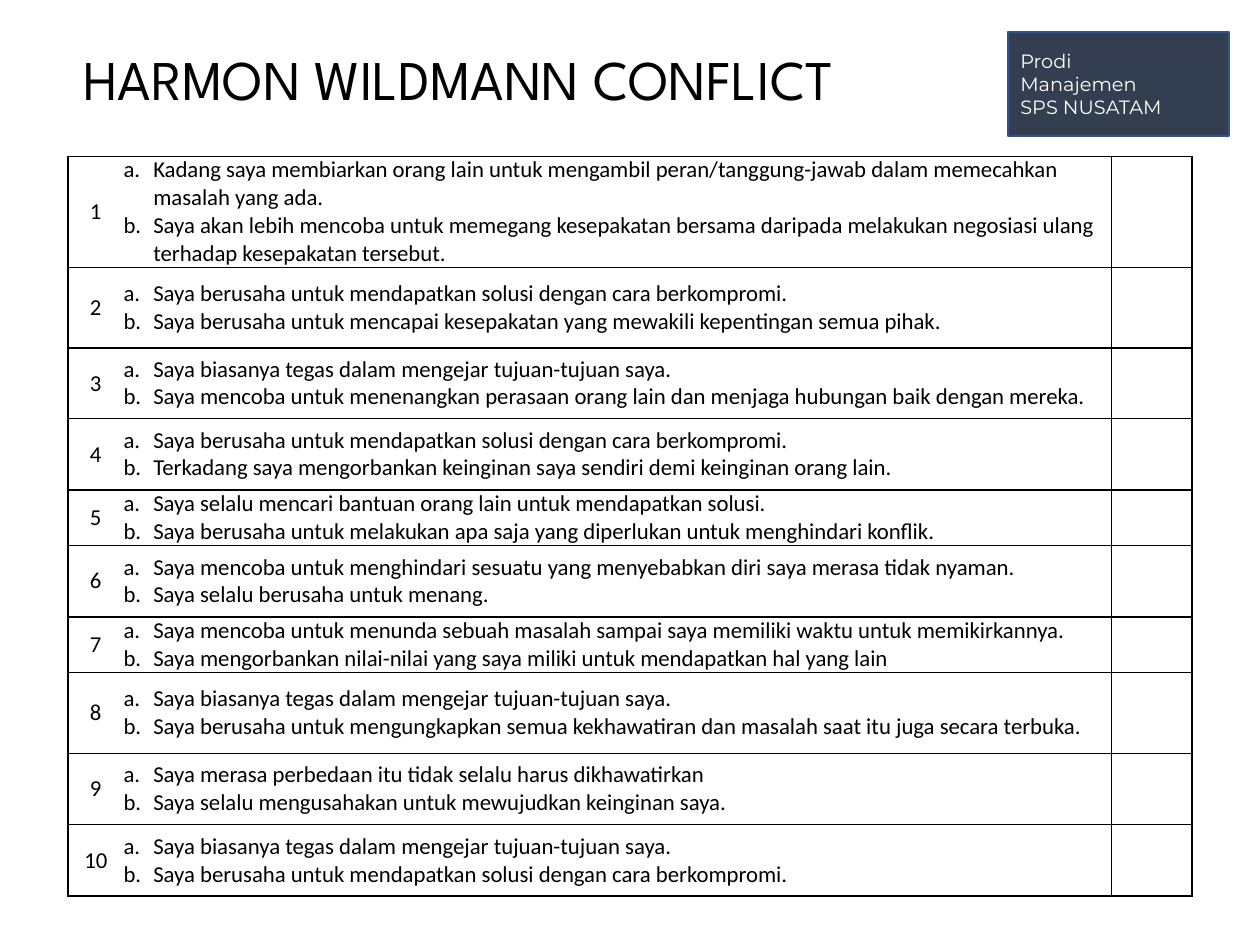
import pptx
import pptx.dml.color
import pptx.enum.shapes
import pptx.enum.text
import pptx.oxml.ns
import pptx.util
from lxml import etree

Cm = pptx.util.Cm
Pt = pptx.util.Pt
RGBColor = pptx.dml.color.RGBColor
MIDDLE = pptx.enum.text.MSO_ANCHOR.MIDDLE
ALIGN = pptx.enum.text.PP_ALIGN

BLACK = RGBColor(0x00, 0x00, 0x00)
WHITE = RGBColor(0xFF, 0xFF, 0xFF)
SLATE = RGBColor(0x33, 0x3F, 0x50)
BLUE = RGBColor(0x32, 0x54, 0x91)

THIN, THICK = Pt(0.5), Pt(1)
INDENT = Cm(0.6)
COLUMN_WIDTHS = [Cm(1.12), Cm(19.91), Cm(1.63)]

# Row height in centimetres, then statements a and b
QUESTIONS = [
    (1.63, "Kadang saya membiarkan orang lain untuk mengambil peran/tanggung-jawab dalam memecahkan masalah yang ada.",
     "Saya akan lebih mencoba untuk memegang kesepakatan bersama daripada melakukan negosiasi ulang terhadap kesepakatan tersebut."),
    (1.63, "Saya berusaha untuk mendapatkan solusi dengan cara berkompromi.",
     "Saya berusaha untuk mencapai kesepakatan yang mewakili kepentingan semua pihak."),
    (1.42, "Saya biasanya tegas dalam mengejar tujuan-tujuan saya.",
     "Saya mencoba untuk menenangkan perasaan orang lain dan menjaga hubungan baik dengan mereka."),
    (1.44, "Saya berusaha untuk mendapatkan solusi dengan cara berkompromi.",
     "Terkadang saya mengorbankan keinginan saya sendiri demi keinginan orang lain."),
    (1.1, "Saya selalu mencari bantuan orang lain untuk mendapatkan solusi.",
     "Saya berusaha untuk melakukan apa saja yang diperlukan untuk menghindari konflik."),
    (1.44, "Saya mencoba untuk menghindari sesuatu yang menyebabkan diri saya merasa tidak nyaman.",
     "Saya selalu berusaha untuk menang."),
    (1.1, "Saya mencoba untuk menunda sebuah masalah sampai saya memiliki waktu untuk memikirkannya.",
     "Saya mengorbankan nilai-nilai yang saya miliki untuk mendapatkan hal yang lain"),
    (1.63, "Saya biasanya tegas dalam mengejar tujuan-tujuan saya.",
     "Saya berusaha untuk mengungkapkan semua kekhawatiran dan masalah saat itu juga secara terbuka."),
    (1.44, "Saya merasa perbedaan itu tidak selalu harus dikhawatirkan",
     "Saya selalu mengusahakan untuk mewujudkan keinginan saya."),
    (1.44, "Saya biasanya tegas dalam mengejar tujuan-tujuan saya.",
     "Saya berusaha untuk mendapatkan solusi dengan cara berkompromi."),
]


def add_span(para, text, font, size, color):
    span = para.add_run()
    span.text = text
    span.font.name = font
    span.font.size = Pt(size)
    span.font.color.rgb = color


def write_lines(frame, lines, font, size, color, align=ALIGN.LEFT):
    """Put each line in its own paragraph and return the paragraphs."""
    for index, text in enumerate(lines):
        para = frame.add_paragraph() if index else frame.paragraphs[0]
        para.alignment = align
        add_span(para, text, font, size, color)
    return frame.paragraphs


def add_child(parent, tag, **attributes):
    return etree.SubElement(parent, pptx.oxml.ns.qn(tag), attributes)


def letter(para):
    """Number the paragraph a., b. with a hanging indent."""
    properties = para._p.get_or_add_pPr()
    properties.set("marL", str(INDENT))
    properties.set("indent", str(-INDENT))
    add_child(properties, "a:buFont", typeface="+mj-lt")
    add_child(properties, "a:buAutoNum", type="alphaLcPeriod")


def set_borders(cell, left, right, top, bottom):
    """Draw the four sides in the given widths; None leaves a side open."""
    properties = cell._tc.get_or_add_tcPr()
    sides = {"a:lnL": left, "a:lnR": right, "a:lnT": top, "a:lnB": bottom}
    for tag, width in sides.items():
        line = add_child(properties, tag, w=str(width or 0))
        if width:
            fill = add_child(line, "a:solidFill")
            add_child(fill, "a:srgbClr", val=str(BLACK))
        else:
            add_child(line, "a:noFill")


def place_title(page, left, top, width, height):
    title = page.shapes.title
    title.left, title.top, title.width, title.height = left, top, width, height
    frame = title.text_frame
    frame.word_wrap = True
    frame.vertical_anchor = MIDDLE
    frame.margin_left = frame.margin_right = Cm(0.13)
    frame.margin_top = frame.margin_bottom = Cm(0.13)
    para, = write_lines(frame, ["HARMON WILDMANN CONFLICT"], "League Spartan", 32, BLACK)
    para.line_spacing = 0.9


def add_questionnaire(page, left, top, width, height):
    table = page.shapes.add_table(len(QUESTIONS), len(COLUMN_WIDTHS), left, top, width, height).table
    table.first_row = table.horz_banding = False
    for column, column_width in zip(table.columns, COLUMN_WIDTHS):
        column.width = column_width

    # Horizontal rules alternate; the outer frame is thick
    rules = [THIN if index % 2 else THICK for index in range(len(QUESTIONS) + 1)]
    uprights = [THICK, None, THIN, THICK]
    for row, (row_height, *statements) in enumerate(QUESTIONS):
        table.rows[row].height = Cm(row_height)
        for column in range(len(COLUMN_WIDTHS)):
            cell = table.cell(row, column)
            cell.margin_left = cell.margin_right = cell.margin_top = cell.margin_bottom = 0
            cell.vertical_anchor = MIDDLE
            set_borders(cell, uprights[column], uprights[column + 1], rules[row], rules[row + 1])
            cell.fill.background()
        write_lines(table.cell(row, 0).text_frame, [str(row + 1)], "Calibri", 13, BLACK, ALIGN.CENTER)
        for para in write_lines(table.cell(row, 1).text_frame, statements, "Calibri", 13, BLACK):
            letter(para)


def add_programme_label(page, left, top, width, height):
    box = page.shapes.add_shape(pptx.enum.shapes.MSO_SHAPE.RECTANGLE, left, top, width, height)
    box.shadow.inherit = False
    box.fill.solid()
    box.fill.fore_color.rgb = SLATE
    box.line.color.rgb = BLUE
    box.line.width = Pt(1)
    frame = box.text_frame
    frame.word_wrap = True
    frame.vertical_anchor = MIDDLE
    write_lines(frame, ["Prodi", "Manajemen", "SPS NUSATAM"], "Montserrat", 11, WHITE)


def main():
    deck = pptx.Presentation()
    deck.slide_width, deck.slide_height = Cm(25.4), Cm(19.05)
    page = deck.slides.add_slide(deck.slide_layouts[5])
    place_title(page, Cm(1.55), Cm(-0.18), Cm(22.3), Cm(3.68))
    add_questionnaire(page, Cm(1.37), Cm(3.15), sum(COLUMN_WIDTHS), Cm(14.27))
    add_programme_label(page, Cm(20.32), Cm(0.64), Cm(4.45), Cm(2.11))
    deck.save("out.pptx")


if __name__ == "__main__":
    main()
